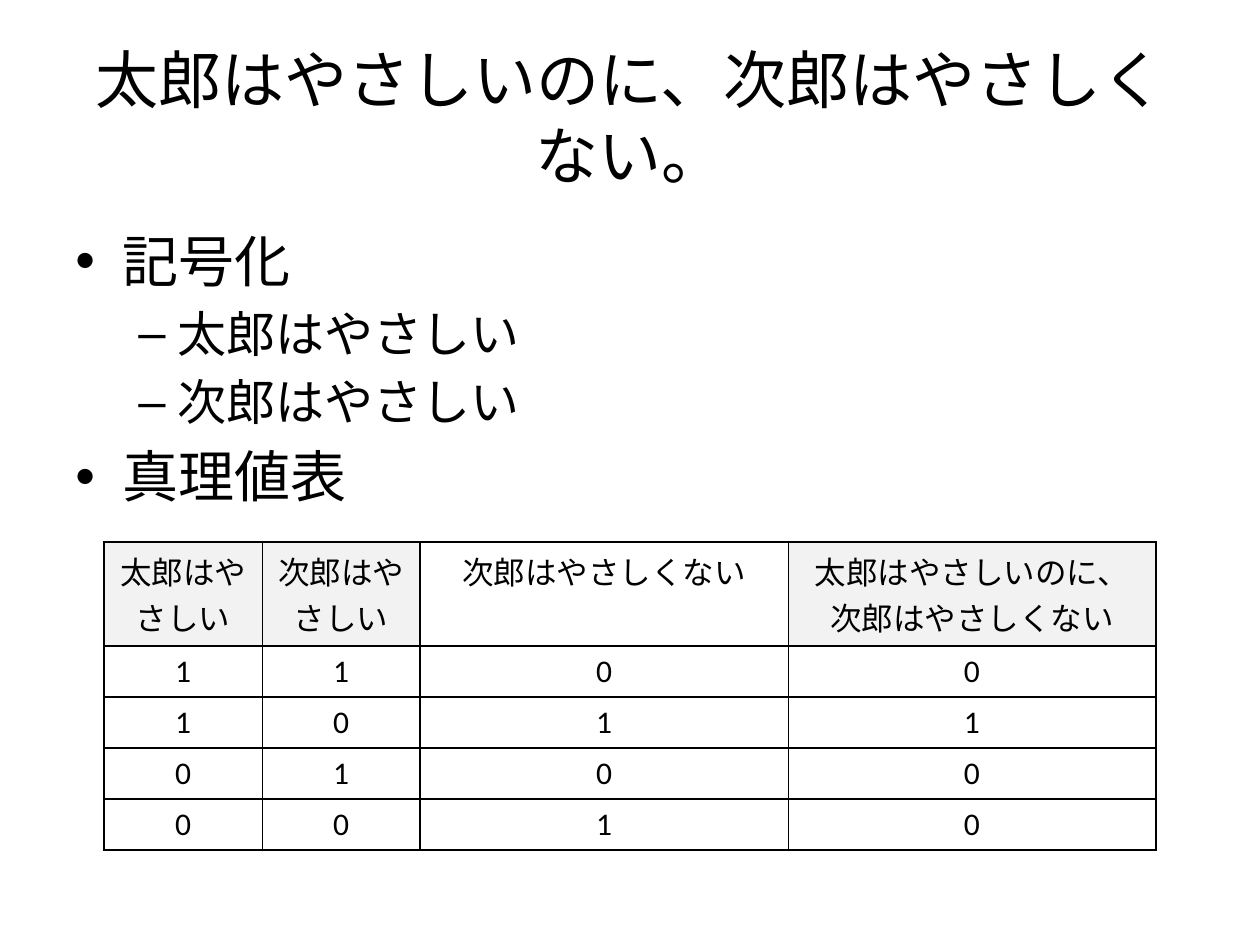
from dataclasses import dataclass

from lxml.etree import SubElement
from pptx import Presentation
from pptx.dml.color import RGBColor
from pptx.enum.lang import MSO_LANGUAGE_ID
from pptx.enum.text import MSO_ANCHOR, PP_ALIGN
from pptx.oxml.ns import qn
from pptx.util import Emu, Pt


@dataclass(frozen=True)
class Theme:
    font: str = "Calibri"
    ink: str = "000000"
    shade: str = "F2F2F2"
    title: int = 36
    item: int = 32
    sub: int = 28
    cell: int = 18
    thick: float = 1
    thin: float = 0.5


@dataclass(frozen=True)
class Box:
    left: int
    top: int
    width: int
    height: int


@dataclass(frozen=True)
class Level:
    size: int
    mark: str
    left: int
    hang: int


@dataclass(frozen=True)
class Item:
    text: str
    level: int


THEME = Theme()
LEVELS = [Level(THEME.item, "•", 47, 47), Level(THEME.sub, "–", 102, 39)]
ITEMS = [
    Item("記号化", 0),
    Item("太郎はやさしい", 1),
    Item("次郎はやさしい", 1),
    Item("真理値表", 0),
]
HEADS = ["太郎はやさしい", "次郎はやさしい", "次郎はやさしくない",
         "太郎はやさしいのに、次郎はやさしくない"]
SHADED = {0, 1, 3}
# Column edges that carry a thin line
THIN = {1, 3}
COLS = [158, 158, 368, 368]
ROWS = [104, 51, 51, 51, 51]


def px(count: int) -> Emu:
    return Emu(round(count * 914400 / 126))


def put(para, text: str, size: int) -> None:
    """Add one styled run."""
    run = para.add_run()
    run.text = text
    font = run.font
    font.size = Pt(size)
    font.name = THEME.font
    font.color.rgb = RGBColor.from_string(THEME.ink)
    font.language_id = MSO_LANGUAGE_ID.JAPANESE


def frame(slide, box: Box):
    """Add a wrapping text box and return its text frame."""
    shape = slide.shapes.add_textbox(
        px(box.left), px(box.top), px(box.width), px(box.height))
    shape.text_frame.word_wrap = True
    return shape.text_frame


def bullet(para, level: Level) -> None:
    props = para._p.get_or_add_pPr()
    props.set("marL", str(px(level.left)))
    props.set("indent", str(-px(level.hang)))
    para.space_before = Pt(level.size * 0.2)
    SubElement(props, qn("a:buFont"), typeface="Arial")
    SubElement(props, qn("a:buChar"), char=level.mark)


def edge(cell, side: str, width: float) -> None:
    props = cell._tc.get_or_add_tcPr()
    line = SubElement(props, qn(f"a:ln{side}"), w=str(Pt(width)))
    fill = SubElement(line, qn("a:solidFill"))
    SubElement(fill, qn("a:srgbClr"), val=THEME.ink)


def rule(col: int) -> float:
    return THEME.thin if col in THIN else THEME.thick


def draw_title(slide, box: Box, text: str) -> None:
    body = frame(slide, box)
    body.vertical_anchor = MSO_ANCHOR.MIDDLE
    para = body.paragraphs[0]
    para.alignment = PP_ALIGN.CENTER
    put(para, text, THEME.title)


def draw_list(slide, box: Box, items: list[Item]) -> None:
    body = frame(slide, box)
    for num, item in enumerate(items):
        para = body.add_paragraph() if num else body.paragraphs[0]
        para.level = item.level
        level = LEVELS[item.level]
        bullet(para, level)
        put(para, item.text, level.size)


def draw_table(slide, left: int, top: int, data: list[list[str]]) -> None:
    table = slide.shapes.add_table(
        len(ROWS), len(COLS), px(left), px(top),
        px(sum(COLS)), px(sum(ROWS))).table
    table.first_row = table.horz_banding = False
    for col, width in zip(table.columns, COLS):
        col.width = px(width)
    for row, height in zip(table.rows, ROWS):
        row.height = px(height)
    for r, line in enumerate(data):
        for c, text in enumerate(line):
            cell = table.cell(r, c)
            # Borders come before the fill in the cell properties
            edge(cell, "L", rule(c))
            edge(cell, "R", rule(c + 1))
            edge(cell, "T", THEME.thick)
            edge(cell, "B", THEME.thick)
            if r == 0 and c in SHADED:
                cell.fill.solid()
                cell.fill.fore_color.rgb = RGBColor.from_string(THEME.shade)
            else:
                cell.fill.background()
            para = cell.text_frame.paragraphs[0]
            para.alignment = PP_ALIGN.CENTER
            put(para, text, THEME.cell)


def truth() -> list[list[str]]:
    """Rows of the truth table for: first and not second."""
    return [[str(v) for v in (a, b, 1 - b, a * (1 - b))]
            for a in (1, 0) for b in (1, 0)]


def main() -> None:
    deck = Presentation()
    deck.slide_width, deck.slide_height = px(1260), px(945)
    slide = deck.slides.add_slide(deck.slide_layouts[6])
    draw_title(slide, Box(63, 38, 1134, 157),
               "太郎はやさしいのに、次郎はやさしくない。")
    draw_list(slide, Box(63, 220, 1134, 624), ITEMS)
    draw_table(slide, 104, 542, [HEADS] + truth())
    deck.save("out.pptx")


if __name__ == "__main__":
    main()
